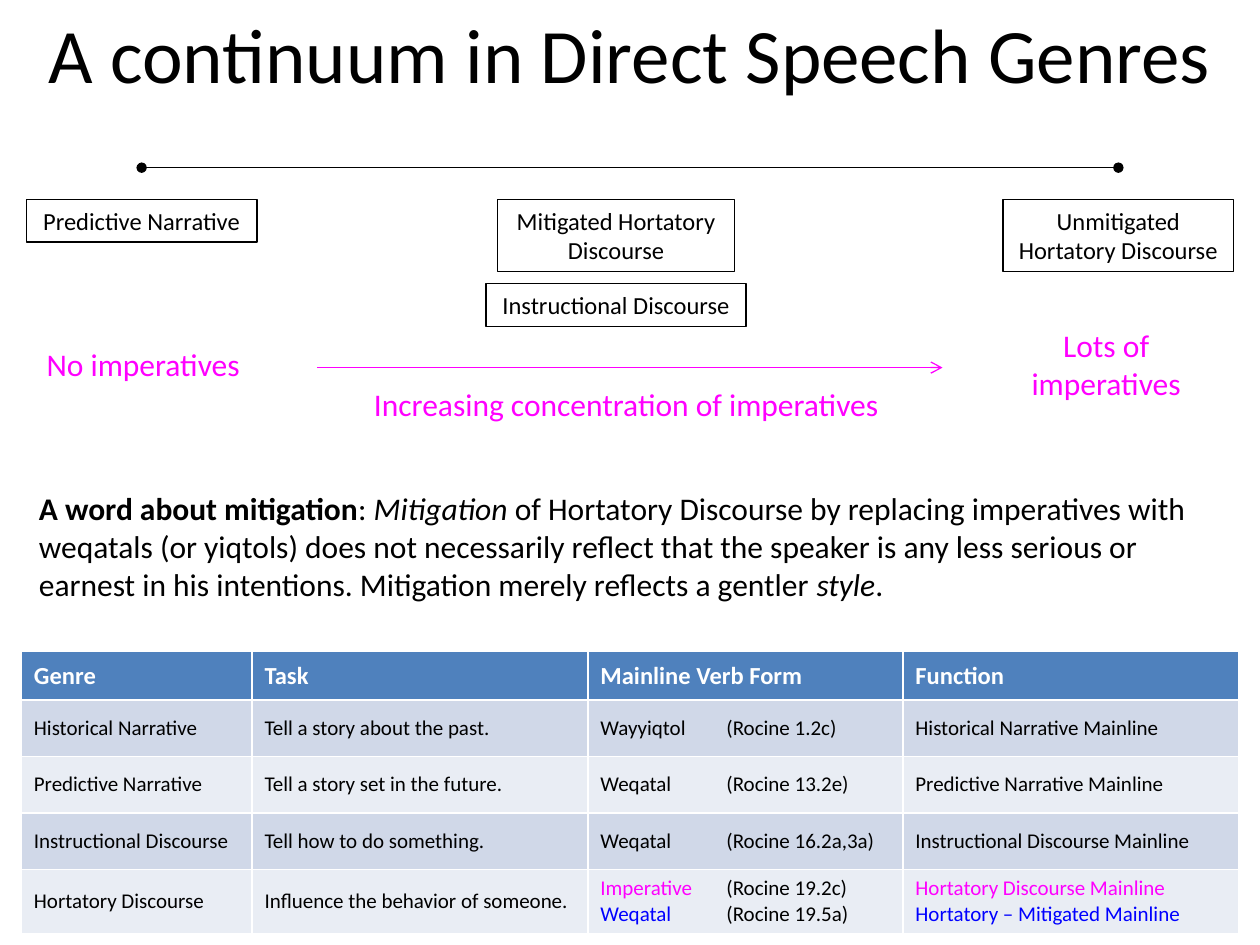
from pptx import Presentation
from pptx.dml.color import RGBColor
from pptx.enum.shapes import MSO_CONNECTOR as Link, MSO_SHAPE as Shape
from pptx.enum.text import MSO_ANCHOR as Anchor, MSO_AUTO_SIZE as Fit, PP_ALIGN as Align
from pptx.oxml.ns import qn
from pptx.util import Cm, Pt
from lxml.etree import SubElement

BLACK = RGBColor(0x00, 0x00, 0x00)
WHITE = RGBColor(0xFF, 0xFF, 0xFF)
PINK = RGBColor(0xFF, 0x00, 0xFF)
BLUE = RGBColor(0x00, 0x00, 0xFF)
HEAD = RGBColor(0x4F, 0x81, 0xBD)
BANDS = RGBColor(0xD0, 0xD8, 0xE8), RGBColor(0xE9, 0xED, 0xF4)
FONT = "Calibri"

WIDTHS = 4.65, 6.77, 6.35, 6.77
TITLES = "Genre", "Task", "Mainline Verb Form", "Function"
ROWS = [
    ("Historical Narrative", "Tell a story about the past.",
     "Wayyiqtol\t(Rocine 1.2c)", "Historical Narrative Mainline"),
    ("Predictive Narrative", "Tell a story set in the future.",
     "Weqatal\t(Rocine 13.2e)", "Predictive Narrative Mainline"),
    ("Instructional Discourse", "Tell how to do something.",
     "Weqatal\t(Rocine 16.2a,3a)", "Instructional Discourse Mainline"),
    ("Hortatory Discourse", "Influence the behavior of someone.",
     [[("Imperative", {"color": PINK}), "\t(Rocine 19.2c)"],
      [("Weqatal", {"color": BLUE}), "\t(Rocine 19.5a)"]],
     [[("Hortatory Discourse Mainline", {"color": PINK})],
      [("Hortatory – Mitigated Mainline", {"color": BLUE})]]),
]
NOTE = [[
    ("A word about mitigation", {"bold": True}), ": ",
    ("Mitigation", {"italic": True}),
    " of Hortatory Discourse by replacing imperatives with weqatals (or yiqtols)"
    " does not necessarily reflect that the speaker is any less serious or earnest"
    " in his intentions. Mitigation merely reflects a gentler ",
    ("style", {"italic": True}), ".",
]]


def write(frame, text, size=14, color=BLACK, bold=False, align=Align.LEFT):
    """Fill a frame with a string, or with paragraphs made of runs.

    A run is a string or a pair of string and its own format.
    """
    paras = [[line] for line in text.split("\n")] if isinstance(text, str) else text
    for i, runs in enumerate(paras):
        para = frame.add_paragraph() if i else frame.paragraphs[0]
        para.alignment = align
        for part in runs:
            words, own = (part, {}) if isinstance(part, str) else part
            run = para.add_run()
            run.text = words
            font = run.font
            font.name, font.size = FONT, Pt(size)
            font.bold = own.get("bold", bold)
            font.italic = own.get("italic", False)
            font.color.rgb = own.get("color", color)


def place(shape, x, y, w, h):
    shape.left, shape.top, shape.width, shape.height = Cm(x), Cm(y), Cm(w), Cm(h)


def rule(slide, x1, x2, y, color, **ends):
    """Draw a level line with the given headEnd and tailEnd kinds."""
    line = slide.shapes.add_connector(Link.STRAIGHT, Cm(x1), Cm(y), Cm(x2), Cm(y))
    line.line.color.rgb = color
    line.line.width = Pt(0.75)
    ln = line.line._get_or_add_ln()
    for tag, kind in ends.items():
        SubElement(ln, qn("a:" + tag), type=kind)
    SubElement(line._element.spPr, qn("a:effectLst"))


def frame_box(slide, text, mid, y, w, h):
    """Draw an outlined label centred on mid."""
    box = slide.shapes.add_shape(Shape.RECTANGLE, Cm(mid - w / 2), Cm(y), Cm(w), Cm(h))
    box.shadow.inherit = False
    box.fill.background()
    box.line.color.rgb = BLACK
    box.line.width = Pt(0.75)
    box.text_frame.word_wrap = True
    box.text_frame.vertical_anchor = Anchor.TOP
    write(box.text_frame, text, align=Align.CENTER)


def label(slide, text, x, y, w, h, align=Align.LEFT):
    box = slide.shapes.add_textbox(Cm(x), Cm(y), Cm(w), Cm(h))
    box.text_frame.word_wrap = False
    box.text_frame.auto_size = Fit.SHAPE_TO_FIT_TEXT
    write(box.text_frame, text, size=18, color=PINK, align=align)


def add_title(slide, x, y, w, h):
    title = slide.shapes.title
    place(title, x, y, w, h)
    title.text_frame.vertical_anchor = Anchor.MIDDLE
    write(title.text_frame, "A continuum in Direct Speech Genres",
          size=44, align=Align.CENTER)


def add_scale(slide, x, y, w):
    """Draw the line between two ends, with the genres along it."""
    wide, one, two = 4.65, 0.86, 1.46
    left, right, mid = x + wide / 2, x + w - wide / 2, x + w / 2 - 0.28
    top = y + 0.64
    rule(slide, left, right, y, BLACK, headEnd="oval", tailEnd="oval")
    frame_box(slide, "Predictive Narrative", left, top, wide, one)
    frame_box(slide, "Unmitigated\nHortatory Discourse", right, top, wide, two)
    frame_box(slide, "Mitigated Hortatory Discourse", mid, top, 4.78, two)
    frame_box(slide, "Instructional Discourse", mid, top + 1.7, 5.24, one)


def add_trend(slide, x, y, w):
    """Draw the arrow from no imperatives to many."""
    label(slide, "No imperatives", x + 0.16, y - 0.58, 4.45, 1.03)
    label(slide, "Lots of\nimperatives", x + w - 4.35, y - 0.96, 3.56, 1.8, Align.CENTER)
    rule(slide, x + 5.87, x + w - 5.87, y, PINK, tailEnd="arrow")
    label(slide, "Increasing concentration of imperatives",
          x + w / 2 - 5.41, y + 0.23, 10.82, 1.03)


def add_note(slide, x, y, w, h):
    body = slide.placeholders[1]
    place(body, x, y, w, h)
    frame = body.text_frame
    frame.auto_size = Fit.NONE
    write(frame, NOTE, size=18)
    props = frame.paragraphs[0]._p.get_or_add_pPr()
    props.set("marL", "0")
    props.set("indent", "0")
    SubElement(props, qn("a:buNone"))


def add_grid(slide, x, y, head, row):
    """Build the genre table with a head row and banded rows."""
    count = len(ROWS) + 1
    table = slide.shapes.add_table(
        count, len(WIDTHS), Cm(x), Cm(y), Cm(sum(WIDTHS)), Cm(head + row * len(ROWS))).table
    for col, wide in zip(table.columns, WIDTHS):
        col.width = Cm(wide)
    for r, texts in enumerate([TITLES, *ROWS]):
        table.rows[r].height = Cm(row if r else head)
        for c, text in enumerate(texts):
            cell = table.cell(r, c)
            cell.vertical_anchor = Anchor.MIDDLE
            cell.fill.solid()
            cell.fill.fore_color.rgb = BANDS[(r - 1) % 2] if r else HEAD
            style = {"size": 12} if r else {"color": WHITE, "bold": True}
            write(cell.text_frame, text, **style)


def main():
    deck = Presentation()
    deck.slide_width, deck.slide_height = Cm(25.4), Cm(19.05)
    slide = deck.slides.add_slide(deck.slide_layouts[1])
    add_title(slide, 0, 0, 25.4, 2.12)
    add_grid(slide, 0.43, 13.13, 0.98, 1.14)
    add_scale(slide, 0.53, 3.38, 24.34)
    add_trend(slide, 0.53, 7.41, 24.34)
    add_note(slide, 0.53, 9.74, 24.34, 2.74)
    deck.save("out.pptx")


if __name__ == "__main__":
    main()
